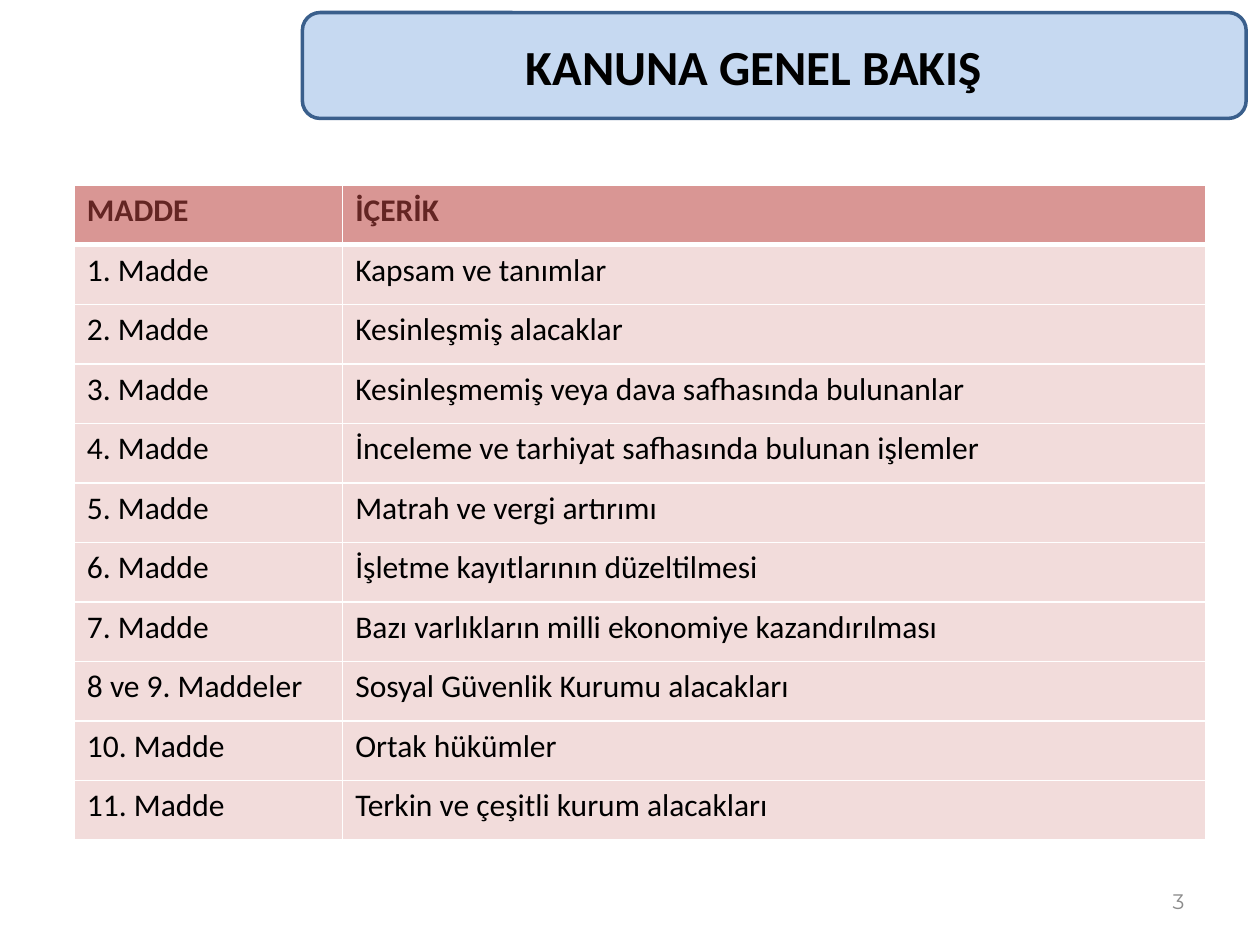
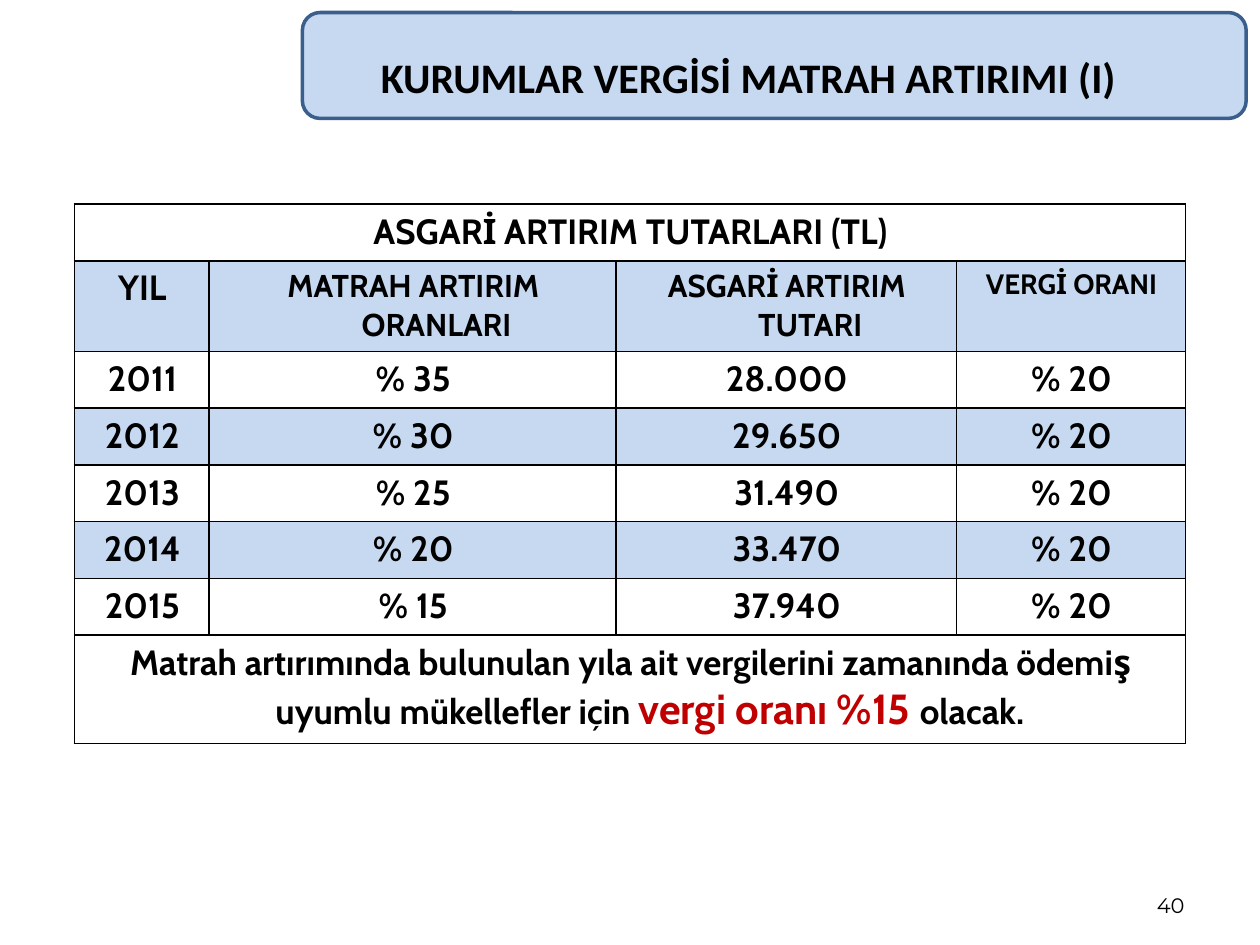
from lxml import etree
from pptx import Presentation
from pptx.dml.color import RGBColor
from pptx.enum.shapes import MSO_SHAPE
from pptx.enum.text import MSO_ANCHOR, PP_ALIGN
from pptx.oxml.ns import qn
from pptx.util import Inches, Pt

ROUNDED = MSO_SHAPE.ROUNDED_RECTANGLE
TOP, MIDDLE, BOTTOM = MSO_ANCHOR.TOP, MSO_ANCHOR.MIDDLE, MSO_ANCHOR.BOTTOM
LEFT, CENTER, RIGHT = PP_ALIGN.LEFT, PP_ALIGN.CENTER, PP_ALIGN.RIGHT

BLACK = RGBColor(0x00, 0x00, 0x00)
WHITE = RGBColor(0xFF, 0xFF, 0xFF)
GREY = RGBColor(0x8B, 0x8B, 0x8B)
RED = RGBColor(0xC0, 0x00, 0x00)
LIGHT_BLUE = RGBColor(0xC6, 0xD9, 0xF1)
BAND_EDGE = RGBColor(0x3A, 0x5F, 0x8C)
HEADER_PINK = RGBColor(0xD9, 0x96, 0x94)
BODY_PINK = RGBColor(0xF2, 0xDC, 0xDB)
DARK_RED = RGBColor(0x63, 0x25, 0x23)

# Square grid: 100 columns by 75 rows
presentation = Presentation()
presentation.slide_width = Inches(10)
presentation.slide_height = Inches(7.5)
GRID = presentation.slide_width // 100
THIN, THICK = Pt(0.96), Pt(3)


def write_text(frame, text, size=18, font="Calibri", color=BLACK, bold=False,
               align=LEFT, anchor=TOP, hanging=False):
    """Write text, or a list of (text, size, color) runs, as one paragraph."""
    frame.word_wrap = True
    frame.vertical_anchor = anchor
    paragraph = frame.paragraphs[0]
    paragraph.alignment = align
    if hanging:
        properties = paragraph._p.get_or_add_pPr()
        properties.set("marL", str(int(3.8 * GRID)))
        properties.set("indent", str(int(-3.7 * GRID)))
    runs = [(text, size, color)] if isinstance(text, str) else text
    for run_text, run_size, run_color in runs:
        run = paragraph.add_run()
        run.text = run_text
        run.font.name = font
        run.font.size = Pt(run_size)
        run.font.bold = bold
        run.font.color.rgb = run_color


def style_cell(cell, fill, border, top=THIN, bottom=THIN):
    """Fill a cell and draw its four borders."""
    cell.fill.solid()
    cell.fill.fore_color.rgb = fill
    properties = cell._tc.get_or_add_tcPr()
    sides = (("a:lnL", THIN), ("a:lnR", THIN), ("a:lnT", top), ("a:lnB", bottom))
    for position, (tag, width) in enumerate(sides):
        line = etree.Element(qn(tag), w=str(int(width)))
        solid = etree.SubElement(line, qn("a:solidFill"))
        etree.SubElement(solid, qn("a:srgbClr"), val=str(border))
        properties.insert(position, line)


# Shared parts: title band, title, page number, empty table
pages = [
    {"title": "KANUNA GENEL BAKIŞ ", "title_size": 28, "title_box": (26.4, 2.9, 67.7, 4.7),
     "number": "3", "number_color": GREY, "number_box": (71.7, 69.5, 23.3, 4), "number_anchor": MIDDLE,
     "table_corner": (5.9, 14.7), "columns": [21.3, 68.5], "rows": [52 / 11] * 11},
    {"title": "KURUMLAR VERGİSİ MATRAH ARTIRIMI (I)", "title_size": 24, "title_box": (16.1, 2.9, 86.6, 6.3),
     "number": "40", "number_color": BLACK, "number_box": (71.7, 68.3, 23.3, 5), "number_anchor": BOTTOM,
     "table_corner": (5.9, 16.2), "columns": [10.7, 32.3, 27, 18.2],
     "rows": [4.5, 7.2] + [4.5] * 5 + [8.6]},
]
tables = []
for page in pages:
    slide = presentation.slides.add_slide(presentation.slide_layouts[6])
    band = slide.shapes.add_shape(ROUNDED, *[int(v * GRID) for v in (24, 1, 74.9, 8.4)])
    band.shadow.inherit = False
    band.fill.solid()
    band.fill.fore_color.rgb = LIGHT_BLUE
    band.line.color.rgb = BAND_EDGE
    band.line.width = Pt(2)

    title = slide.shapes.add_textbox(*[int(v * GRID) for v in page["title_box"]])
    write_text(title.text_frame, page["title"], size=page["title_size"], bold=True,
               align=CENTER, anchor=MIDDLE)
    number = slide.shapes.add_textbox(*[int(v * GRID) for v in page["number_box"]])
    write_text(number.text_frame, page["number"], size=12, font="Montserrat",
               color=page["number_color"], align=RIGHT, anchor=page["number_anchor"])

    columns, rows = page["columns"], page["rows"]
    extent = (*page["table_corner"], sum(columns), sum(rows))
    table = slide.shapes.add_table(len(rows), len(columns), *[int(v * GRID) for v in extent]).table
    table.first_row = table.horz_banding = False
    for column, width in zip(table.columns, columns):
        column.width = int(width * GRID)
    for row, height in zip(table.rows, rows):
        row.height = int(height * GRID)
    tables.append(table)
articles_table, rates_table = tables

# Articles of the law
articles = [
    ("MADDE", "İÇERİK"),
    ("1. Madde", "Kapsam ve tanımlar"),
    ("2. Madde", "Kesinleşmiş alacaklar"),
    ("3. Madde", "Kesinleşmemiş veya dava safhasında bulunanlar"),
    ("4. Madde", "İnceleme ve tarhiyat safhasında bulunan işlemler"),
    ("5. Madde", "Matrah ve vergi artırımı"),
    ("6. Madde", "İşletme kayıtlarının düzeltilmesi"),
    ("7. Madde", "Bazı varlıkların milli ekonomiye kazandırılması"),
    ("8 ve 9. Maddeler", "Sosyal Güvenlik Kurumu alacakları"),
    ("10. Madde", "Ortak hükümler"),
    ("11. Madde", "Terkin ve çeşitli kurum alacakları"),
]
for row_index, article in enumerate(articles):
    header = row_index == 0
    for column_index, text in enumerate(article):
        cell = articles_table.cell(row_index, column_index)
        write_text(cell.text_frame, text, color=DARK_RED if header else BLACK, bold=header)
        style_cell(cell, HEADER_PINK if header else BODY_PINK, WHITE,
                   top=THICK if row_index == 1 else THIN, bottom=THICK if header else THIN)

# Minimum increases by year, with a heading and a note across all columns
note = [
    ("Matrah artırımında bulunulan yıla ait vergilerini zamanında ödemiş uyumlu mükellefler için ", 20, BLACK),
    ("vergi oranı %15 ", 24, RED),
    ("olacak. ", 20, BLACK),
]
rates = [
    ["ASGARİ ARTIRIM TUTARLARI (TL)"],
    ["YIL", "MATRAH ARTIRIM ORANLARI", "ASGARİ ARTIRIM TUTARI", "VERGİ ORANI"],
    ["2011", "% 35", "28.000", "% 20"],
    ["2012", "% 30", "29.650", "% 20"],
    ["2013", "% 25", "31.490", "% 20"],
    ["2014", "% 20", "33.470", "% 20"],
    ["2015", "% 15", "37.940", "% 20"],
    [note],
]
header_sizes = [20, 18, 18, 16]
last_column = len(rates_table.columns) - 1
for row_index, values in enumerate(rates):
    if len(values) == 1:
        rates_table.cell(row_index, 0).merge(rates_table.cell(row_index, last_column))
    shaded = row_index in (1, 3, 5)
    for column_index in range(last_column + 1):
        style_cell(rates_table.cell(row_index, column_index), LIGHT_BLUE if shaded else WHITE, BLACK)
    for column_index, text in enumerate(values):
        write_text(rates_table.cell(row_index, column_index).text_frame, text,
                   size=header_sizes[column_index] if row_index == 1 else 20,
                   font="Cabin", bold=True, align=CENTER, hanging=True)

presentation.save("out.pptx")
